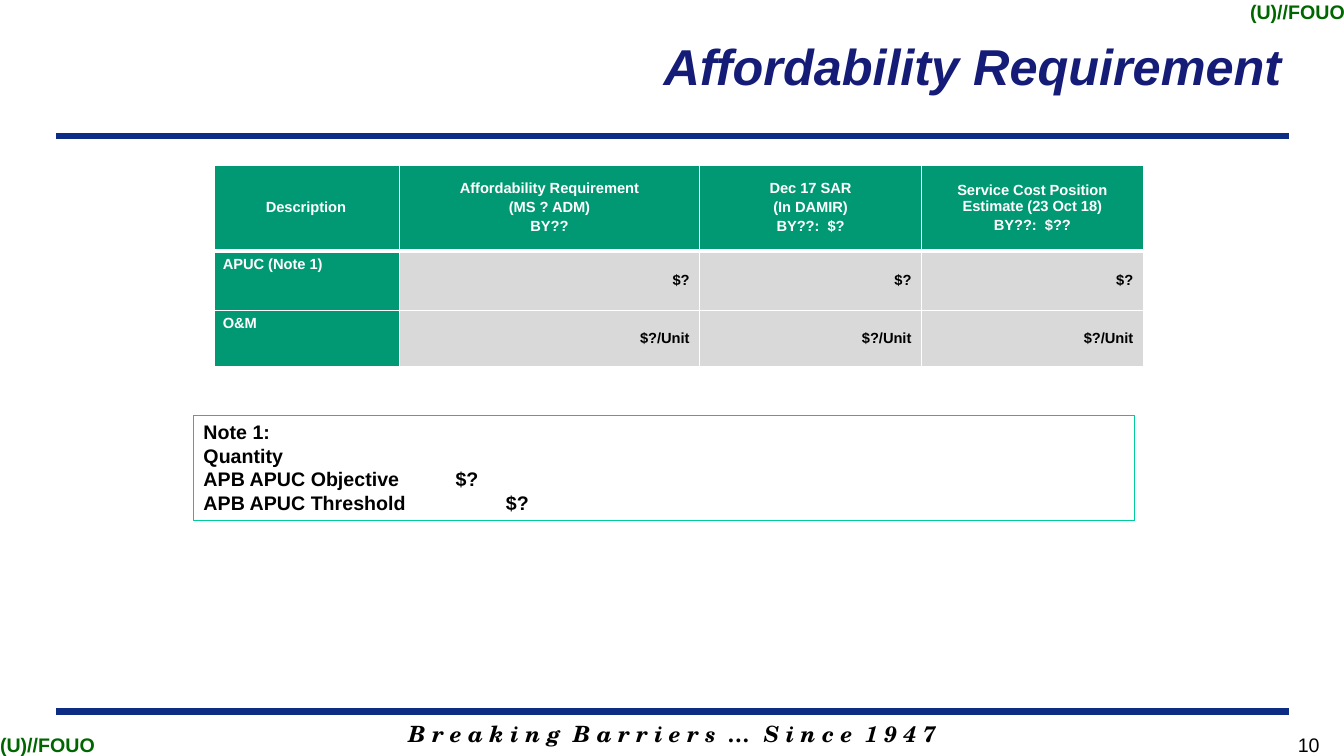
from lxml.etree import SubElement
from pptx import Presentation
from pptx.dml.color import RGBColor
from pptx.enum.shapes import MSO_CONNECTOR, MSO_SHAPE
from pptx.enum.text import MSO_ANCHOR, PP_ALIGN
from pptx.oxml.ns import qn
from pptx.util import Inches, Pt

WHITE = RGBColor(0xFF, 0xFF, 0xFF)
BLACK = RGBColor(0x00, 0x00, 0x00)
NAVY = RGBColor(0x15, 0x1C, 0x77)
RULE_BLUE = RGBColor(0x0C, 0x2D, 0x83)
MARKING_GREEN = RGBColor(0x00, 0x66, 0x00)
HEADER_GREEN = RGBColor(0x00, 0x99, 0x73)
NOTE_GREEN = RGBColor(0x00, 0xCC, 0x99)
VALUE_GRAY = RGBColor(0xD9, 0xD9, 0xD9)

HEADERS = [
    ["Description"],
    ["Affordability Requirement", "(MS ? ADM)", "BY??"],
    ["Dec 17 SAR", "(In DAMIR)", "BY??:  $?"],
    ["Service Cost Position Estimate (23 Oct 18)", "BY??:  $??"],
]
COST_ROWS = [
    [["APUC (Note 1)"], ["$?"], ["$?"], ["$?"]],
    [["O&M"], ["$?/Unit"], ["$?/Unit"], ["$?/Unit"]],
]
NOTE = ["Note 1:", "Quantity", "APB APUC Objective\t\t$?", "APB APUC Threshold\t\t$?"]


class SlideBuilder:
    def __init__(self, slide, font_name="Arial"):
        self.slide = slide
        self.font_name = font_name

    def fill_text(self, frame, lines, align=PP_ALIGN.LEFT, color=BLACK, gap=0, **font):
        """Fill a text frame, with gap points between its paragraphs."""
        style = {"name": self.font_name, "bold": True} | font
        for index, line in enumerate(lines):
            paragraph = frame.add_paragraph() if index else frame.paragraphs[0]
            paragraph.alignment = align
            if index:
                paragraph.space_before = Pt(gap)
            run = paragraph.add_run()
            run.text = line
            for key, value in style.items():
                setattr(run.font, key, value)
            run.font.color.rgb = color

    def text(self, box, line, anchor=MSO_ANCHOR.TOP, inset=True, **style):
        frame = self.slide.shapes.add_textbox(*map(Inches, box)).text_frame
        frame.word_wrap = inset
        frame.vertical_anchor = anchor
        if not inset:
            for side in ("left", "top", "right", "bottom"):
                setattr(frame, f"margin_{side}", 0)
        self.fill_text(frame, [line], **style)

    def rule(self, left, right, y):
        rule = self.slide.shapes.add_connector(
            MSO_CONNECTOR.STRAIGHT, Inches(left), Inches(y), Inches(right), Inches(y))
        rule.line.color.rgb = RULE_BLUE
        rule.line.width = Pt(4.5)
        SubElement(rule._element.spPr, qn("a:effectLst"))

    def framed_note(self, box, lines, **style):
        note = self.slide.shapes.add_shape(MSO_SHAPE.RECTANGLE, *map(Inches, box))
        note.shadow.inherit = False
        note.fill.background()
        note.line.color.rgb = NOTE_GREEN
        note.line.width = Pt(0.75)
        note.text_frame.word_wrap = True
        note.text_frame.vertical_anchor = MSO_ANCHOR.TOP
        self.fill_text(note.text_frame, lines, **style)

    def cell_borders(self, cell, widths):
        properties = cell._tc.get_or_add_tcPr()
        for side, width in widths.items():
            border = SubElement(properties, qn(f"a:ln{side}"), w=str(Pt(width)))
            fill = SubElement(border, qn("a:solidFill"))
            SubElement(fill, qn("a:srgbClr"), val=str(WHITE))

    def cost_table(self, left, top, widths, heights, rows):
        table = self.slide.shapes.add_table(
            len(rows), len(widths), Inches(left), Inches(top),
            Inches(sum(widths)), Inches(sum(heights))).table
        for column, width in zip(table.columns, widths):
            column.width = Inches(width)
        for table_row, height in zip(table.rows, heights):
            table_row.height = Inches(height)
        for r, row in enumerate(rows):
            for c, lines in enumerate(row):
                cell = table.cell(r, c)
                is_header, is_label = r == 0, c == 0
                is_value = not (is_header or is_label)
                self.cell_borders(cell, {
                    "L": 3 if is_label else 1,
                    "R": 1,
                    "T": 3 if r < 2 else 1,
                    "B": 3 if is_header else 1,
                })
                cell.fill.solid()
                cell.fill.fore_color.rgb = VALUE_GRAY if is_value else HEADER_GREEN
                cell.vertical_anchor = (
                    MSO_ANCHOR.MIDDLE if is_header or is_value else MSO_ANCHOR.TOP)
                align = (PP_ALIGN.CENTER if is_header
                         else PP_ALIGN.RIGHT if is_value else PP_ALIGN.LEFT)
                self.fill_text(cell.text_frame, lines, align=align, gap=2,
                               color=BLACK if is_value else WHITE, size=Pt(10.5))


def main():
    presentation = Presentation()
    presentation.slide_width = Inches(13.33)
    presentation.slide_height = Inches(7.5)
    page = SlideBuilder(presentation.slides.add_slide(presentation.slide_layouts[6]))

    page.text((1.89, 7.1, 9.56, 0.37),
              "B r e a k i n g  B a r r i e r s  …  S i n c e  1 9 4 7",
              align=PP_ALIGN.CENTER, name="TeX Gyre Schola", size=Pt(16), italic=True)
    for y in (7.06, 1.35):
        page.rule(0.56, 12.78, y)

    marking = {"line": "(U)//FOUO", "inset": False, "color": MARKING_GREEN, "size": Pt(14)}
    page.text((12.39, 0, 0.95, 0.24), align=PP_ALIGN.RIGHT, **marking)
    page.text((0, 7.26, 0.95, 0.24), anchor=MSO_ANCHOR.BOTTOM, **marking)
    page.text((12.63, 7.26, 0.7, 0.25), "10", anchor=MSO_ANCHOR.MIDDLE,
              align=PP_ALIGN.CENTER, size=Pt(14), bold=False)
    page.text((4.54, 0, 8.27, 1.3), "Affordability Requirement", anchor=MSO_ANCHOR.MIDDLE,
              align=PP_ALIGN.RIGHT, color=NAVY, size=Pt(36), italic=True)

    page.cost_table(2.11, 1.63, [1.85, 2.98, 2.2, 2.2], [0.86, 0.59, 0.56],
                    [HEADERS, *COST_ROWS])
    page.framed_note((1.92, 4.12, 9.33, 1.04), NOTE, size=Pt(14))

    presentation.save("out.pptx")


if __name__ == "__main__":
    main()
